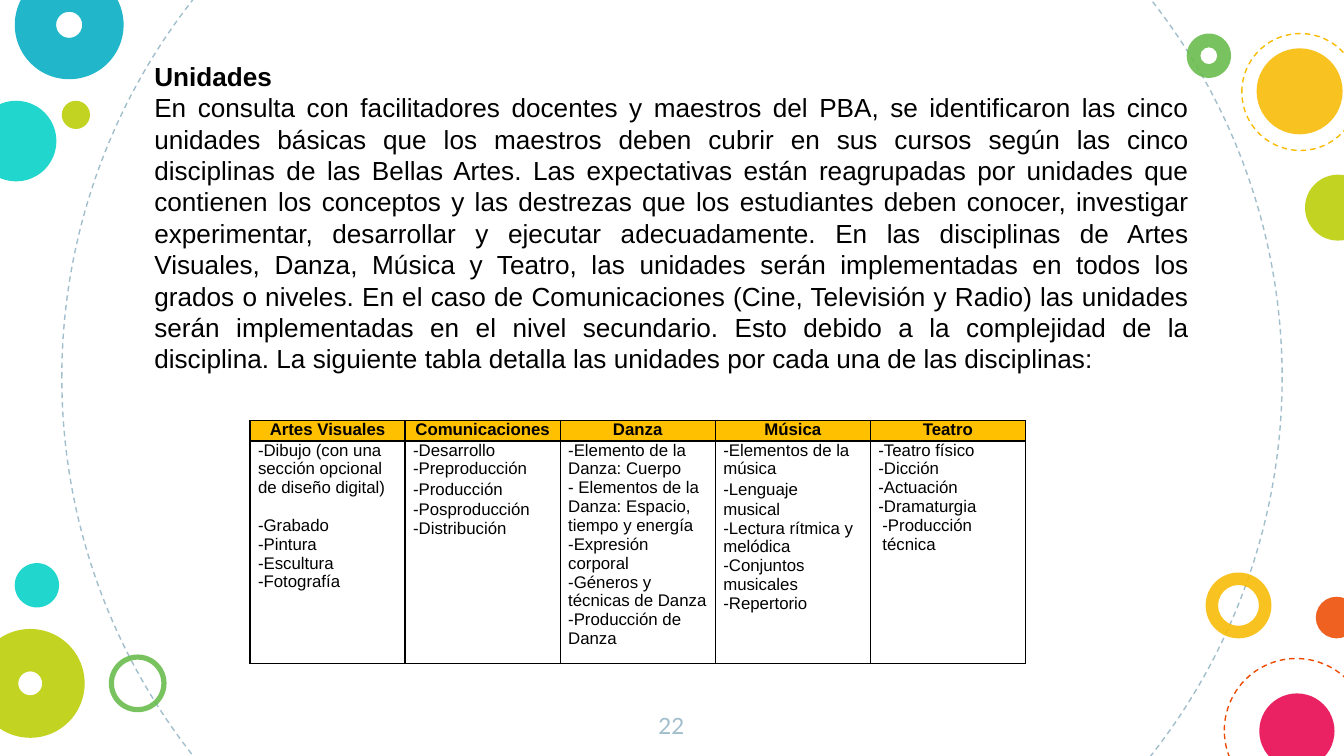
"""Build the slide that lists the units of each fine arts discipline."""
from dataclasses import dataclass
from typing import Optional

from lxml.etree import SubElement
from pptx import Presentation
from pptx.dml.color import RGBColor
from pptx.enum.dml import MSO_LINE
from pptx.enum.shapes import MSO_SHAPE
from pptx.enum.text import MSO_ANCHOR, PP_ALIGN
from pptx.oxml.ns import qn
from pptx.util import Inches, Pt


@dataclass(frozen=True)
class Theme:
    text_font: str = "Arial"
    number_font: str = "Lato"
    body_size: float = 14
    table_size: float = 9
    number_size: float = 12
    line_width: float = 0.75
    opacity: int = 87
    black: str = "000000"
    header: str = "FFC000"
    gray: str = "A1BECC"
    turquoise: str = "00D1C6"
    yellow: str = "F8BB00"
    blue: str = "00ACC3"
    lime: str = "BBCD00"
    orange: str = "ED4A00"
    green: str = "65BB48"
    pink: str = "E8004C"


THEME = Theme()


@dataclass(frozen=True)
class Circle:
    left: float
    top: float
    size: float
    color: str
    ring: Optional[float] = None
    dashed: bool = False


@dataclass(frozen=True)
class Item:
    text: str
    space_before: float = 0
    line_spacing: Optional[float] = None
    indent: float = 0


@dataclass(frozen=True)
class Discipline:
    name: str
    units: tuple[Item, ...]


CIRCLES = (
    Circle(0.46, -1.73, 9.08, THEME.gray, dashed=True),
    Circle(-0.18, 0.75, 0.6, THEME.turquoise),
    Circle(8.97, 4.26, 0.49, THEME.yellow, ring=0.19),
    Circle(0.11, -0.22, 0.81, THEME.blue, ring=0.38),
    Circle(0.46, 0.75, 0.21, THEME.lime),
    Circle(9.11, 4.9, 1.07, THEME.orange, dashed=True),
    Circle(0.81, 4.87, 0.43, THEME.green, ring=0.09),
    Circle(9.79, 4.44, 0.31, THEME.orange),
    Circle(-0.18, 4.68, 0.81, THEME.lime, ring=0.39),
    Circle(9.37, 5.16, 0.56, THEME.pink),
    Circle(8.83, 0.25, 0.33, THEME.green, ring=0.31),
    Circle(9.35, 0.36, 0.64, THEME.yellow),
    Circle(9.71, 1.3, 0.49, THEME.lime),
    Circle(9.24, 0.25, 0.87, THEME.yellow, dashed=True),
    Circle(0.11, 4.19, 0.33, THEME.turquoise),
)

DISCIPLINES = (
    Discipline("Artes Visuales", (
        Item("-Dibujo (con una sección opcional de diseño digital)"),
        Item("-Grabado", space_before=10),
        Item("-Pintura"), Item("-Escultura"), Item("-Fotografía"))),
    Discipline("Comunicaciones", (
        Item("-Desarrollo"), Item("-Preproducción"),
        Item("-Producción", line_spacing=1.07),
        Item("-Posproducción", line_spacing=1.07),
        Item("-Distribución"))),
    Discipline("Danza", (
        Item("-Elemento de la Danza: Cuerpo"),
        Item("- Elementos de la Danza: Espacio, tiempo y energía"),
        Item("-Expresión corporal"),
        Item("-Géneros y técnicas de Danza"),
        Item("-Producción de Danza"))),
    Discipline("Música", (
        Item("-Elementos de la música"),
        Item("-Lenguaje\nmusical", line_spacing=1.07),
        Item("-Lectura rítmica y melódica"),
        Item("-Conjuntos musicales"), Item("-Repertorio"))),
    Discipline("Teatro", (
        Item("-Teatro físico"), Item("-Dicción"), Item("-Actuación"),
        Item("-Dramaturgia"), Item("-Producción técnica", indent=0.03))),
)

HEADING = "Unidades"
BODY = (
    "En consulta con facilitadores docentes y maestros del PBA, se identificaron las cinco "
    "unidades básicas que los maestros deben cubrir en sus cursos según las cinco disciplinas "
    "de las Bellas Artes. Las expectativas están reagrupadas por unidades que contienen los "
    "conceptos y las destrezas que los estudiantes deben conocer, investigar experimentar, "
    "desarrollar y ejecutar adecuadamente. En las disciplinas de Artes Visuales, Danza, Música "
    "y Teatro, las unidades serán implementadas en todos los grados o niveles. En el caso de "
    "Comunicaciones (Cine, Televisión y Radio) las unidades serán implementadas en el nivel "
    "secundario. Esto debido a la complejidad de la disciplina. La siguiente tabla detalla las "
    "unidades por cada una de las disciplinas:"
)


def draw_circle(slide, circle: Circle) -> None:
    kind = MSO_SHAPE.OVAL if circle.ring is None else MSO_SHAPE.DONUT
    shape = slide.shapes.add_shape(kind, Inches(circle.left), Inches(circle.top),
                                   Inches(circle.size), Inches(circle.size))
    shape.shadow.inherit = False
    color = RGBColor.from_string(circle.color)
    if circle.ring is not None:
        shape.adjustments[0] = circle.ring
    if circle.dashed:
        shape.fill.background()
        shape.line.color.rgb = color
        shape.line.width = Pt(THEME.line_width)
        shape.line.dash_style = MSO_LINE.DASH
    else:
        shape.line.fill.background()
        shape.fill.solid()
        shape.fill.fore_color.rgb = color
        color_element = shape.fill._xPr.find(qn("a:solidFill"))[0]
        SubElement(color_element, qn("a:alpha"), val=str(THEME.opacity * 1000))


def add_text(paragraph, text: str, size: float, bold: bool = False,
             align: PP_ALIGN = PP_ALIGN.LEFT, font: str = THEME.text_font,
             color: str = THEME.black) -> None:
    paragraph.alignment = align
    for index, line in enumerate(text.split("\n")):
        if index:
            paragraph.add_line_break()
        run = paragraph.add_run()
        run.text = line
        run.font.name = font
        run.font.size = Pt(size)
        run.font.bold = bold
        run.font.color.rgb = RGBColor.from_string(color)


def add_text_frame(slide, left: float, top: float, width: float, height: float):
    box = slide.shapes.add_textbox(Inches(left), Inches(top), Inches(width), Inches(height))
    box.text_frame.word_wrap = True
    return box.text_frame


def format_cell(cell) -> None:
    cell.margin_left = cell.margin_right = Inches(0.06)
    cell.margin_top = cell.margin_bottom = 0
    cell.vertical_anchor = MSO_ANCHOR.TOP
    properties = cell._tc.get_or_add_tcPr()
    for side in ("lnL", "lnR", "lnT", "lnB"):
        border = SubElement(properties, qn(f"a:{side}"), w=str(Pt(THEME.line_width)))
        SubElement(SubElement(border, qn("a:solidFill")), qn("a:srgbClr"), val=THEME.black)


def draw_table(slide, disciplines: tuple[Discipline, ...]) -> None:
    table = slide.shapes.add_table(2, len(disciplines), Inches(1.86), Inches(3.13),
                                   Inches(5.77), Inches(1.8)).table
    table.first_row = table.horz_banding = False
    table.rows[0].height = Inches(0.15)
    table.rows[1].height = Inches(1.65)
    for column, discipline in enumerate(disciplines):
        header, body = table.cell(0, column), table.cell(1, column)
        format_cell(header)
        format_cell(body)
        header.fill.solid()
        header.fill.fore_color.rgb = RGBColor.from_string(THEME.header)
        body.fill.background()
        add_text(header.text_frame.paragraphs[0], discipline.name, THEME.table_size,
                 bold=True, align=PP_ALIGN.CENTER)
        for index, item in enumerate(discipline.units):
            frame = body.text_frame
            paragraph = frame.add_paragraph() if index else frame.paragraphs[0]
            add_text(paragraph, item.text, THEME.table_size)
            if item.space_before:
                paragraph.space_before = Pt(item.space_before)
            if item.line_spacing:
                paragraph.line_spacing = item.line_spacing
            if item.indent:
                paragraph._p.get_or_add_pPr().set("marL", str(Inches(item.indent)))


def main() -> None:
    presentation = Presentation()
    presentation.slide_width = Inches(10)
    presentation.slide_height = Inches(10 * 9 / 16)
    slide = presentation.slides.add_slide(presentation.slide_layouts[6])
    for circle in CIRCLES:
        draw_circle(slide, circle)
    number = add_text_frame(slide, 4.74, 5.2, 0.51, 0.43)
    number.margin_top = number.margin_bottom = Inches(0.1)
    add_text(number.paragraphs[0], "22", THEME.number_size, align=PP_ALIGN.CENTER,
             font=THEME.number_font, color=THEME.gray)
    body = add_text_frame(slide, 1.05, 0.4, 7.9, 2.46)
    add_text(body.paragraphs[0], HEADING, THEME.body_size, bold=True, align=PP_ALIGN.JUSTIFY)
    add_text(body.add_paragraph(), BODY, THEME.body_size, align=PP_ALIGN.JUSTIFY)
    draw_table(slide, DISCIPLINES)
    presentation.save("out.pptx")


if __name__ == "__main__":
    main()
